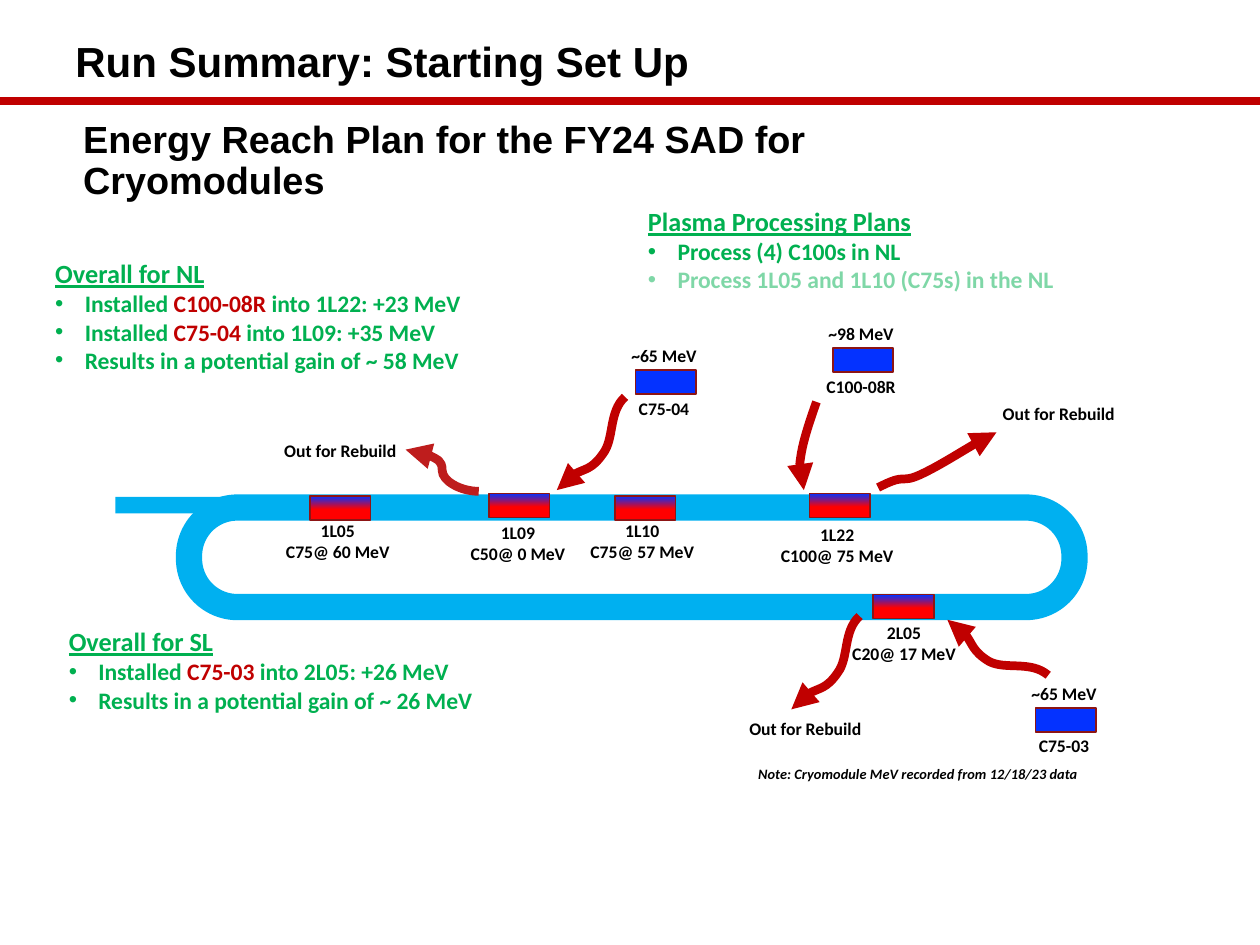
from pptx import Presentation
from pptx.dml.color import RGBColor
from pptx.enum.shapes import MSO_CONNECTOR, MSO_SHAPE
from pptx.enum.text import MSO_ANCHOR, PP_ALIGN
from pptx.oxml.ns import qn
from pptx.util import Pt
from lxml.etree import SubElement

rgb = RGBColor.from_string
GREEN, RED, CYAN, BLUE, BLACK = "00B050", "C00000", "00B0F0", "0432FF", "000000"


def write(para, text, size, hue=BLACK, face="Calibri"):
    run = para.add_run()
    run.text = text
    font = run.font
    font.name, font.size, font.bold = face, Pt(size), True
    font.color.rgb = rgb(hue)
    return run


def label(home, mid, top, wide, lines):
    box = home.add_textbox(Pt(mid - wide / 2), Pt(top), Pt(wide), Pt(16))
    frame = box.text_frame
    frame.word_wrap = False
    frame.margin_left = frame.margin_right = Pt(4.3)
    frame.margin_top = frame.margin_bottom = Pt(2.2)
    for i, line in enumerate(lines):
        para = frame.add_paragraph() if i else frame.paragraphs[0]
        para.alignment = PP_ALIGN.CENTER
        write(para, line, 10.1)


deck = Presentation()
deck.slide_width, deck.slide_height = Pt(720), Pt(540)
slide = deck.slides.add_slide(deck.slide_layouts[5])
shapes = slide.shapes

# Title
title = shapes.title
title.left, title.top, title.width, title.height = Pt(40.3), Pt(79), Pt(562.3), Pt(27)
frame = title.text_frame
frame.word_wrap = True
frame.vertical_anchor = MSO_ANCHOR.MIDDLE
para = frame.paragraphs[0]
para.alignment = PP_ALIGN.LEFT
para.line_spacing = 0.9
write(para, "Energy Reach Plan for the FY24 SAD for Cryomodules", 21.6, face="Arial")

# Header and footnote
for x, y, w, h, text, size, face, wrap in [
    (36, 16.6, 368.6, 36, "Run Summary: Starting Set Up", 24, "Arial", False),
    (426.2, 433.4, 213.1, 17.3, "Note: Cryomodule MeV recorded from 12/18/23 data",
     8.25, "Calibri", True),
]:
    frame = shapes.add_textbox(Pt(x), Pt(y), Pt(w), Pt(h)).text_frame
    frame.word_wrap = wrap
    run = write(frame.paragraphs[0], text, size, face=face)
    run.font.italic = wrap

# Rule under the header
rule = shapes.add_connector(MSO_CONNECTOR.STRAIGHT, 0, Pt(57.6), Pt(720), Pt(57.6))
rule.line.color.rgb = rgb(RED)
rule.line.width = Pt(4.5)
SubElement(rule._element.spPr, qn("a:effectLst"))

# Accelerator loop and injector
loop = shapes.add_shape(MSO_SHAPE.ROUNDED_RECTANGLE, Pt(108), Pt(290), Pt(506), Pt(56.9))
loop.adjustments[0] = 0.486
loop.shadow.inherit = False
loop.fill.background()
loop.line.color.rgb = rgb(CYAN)
loop.line.width = Pt(15)
feed = shapes.add_shape(MSO_SHAPE.RECTANGLE, Pt(66), Pt(284), Pt(67), Pt(9.4))
feed.shadow.inherit = False
feed.fill.solid()
feed.fill.fore_color.rgb = rgb(CYAN)
feed.line.fill.background()

# Curved arrows: a start, then two Bezier pieces of three points
ess = [(39, 0), (29.5, 8.6), (33, 23.8), (26.5, 32.4), (20, 41.8), (3.5, 44.6), (0, 53.3)]
curves = [[(x + dx, y + dy) for x, y in ess] for dx, dy in [(452.2, 352.1), (318.2, 226.8)]]
curves += [
    [(466.6, 229.7), (463, 239.8), (459.4, 250.6), (457.9, 259.2),
     (456.5, 267.8), (457.9, 273.6), (459.4, 280.1)],
    [(501.8, 278.6), (518.4, 270), (514.1, 276.5), (525.6, 271.4),
     (536.4, 266.4), (563.8, 249.1), (569.5, 247)],
    [(599, 385.9), (589, 377.3), (574.6, 383), (565.2, 378),
     (555.8, 372.2), (550.8, 356.4), (541.4, 354.2)],
]
arrows = []
for curve in curves:
    dots = [(Pt(x), Pt(y)) for x, y in curve]
    pen = shapes.build_freeform(*dots[0])
    pen.add_line_segments(dots[1:], close=False)
    arrow = pen.convert_to_shape()
    arrow.fill.background()
    steps = list(arrow._element.iter(qn("a:lnTo")))
    for i in range(0, len(steps), 3):
        bend = steps[i].makeelement(qn("a:cubicBezTo"))
        steps[i].addprevious(bend)
        for step in steps[i:i + 3]:
            bend.append(step[0])
            step.getparent().remove(step)
    arrows.append((arrow, RED))
link = shapes.add_connector(MSO_CONNECTOR.CURVE, Pt(273.6), Pt(280.8), Pt(231.8), Pt(257))
arrows.append((link, "BE1D1D"))
for arrow, hue in arrows:
    arrow.line.color.rgb = rgb(hue)
    arrow.line.width = Pt(5)
    props = arrow._element.spPr
    SubElement(props.find(qn("a:ln")), qn("a:tailEnd"), type="triangle")
    SubElement(props, qn("a:effectLst"))

# Cryomodules: spares have an energy above and a name below
for x, y, spare, mid, top, lines in [
    (177.1, 283.4, None, 193, 295, ["1L05", "C75@ 60 MeV"]),
    (279.4, 282, None, 296, 295.9, ["1L09", "C50@ 0 MeV"]),
    (351.4, 283.4, None, 367, 295, ["1L10", "C75@ 57 MeV"]),
    (462.5, 282, None, 478.4, 297.2, ["1L22", "C100@ 75 MeV"]),
    (499, 339.8, None, 516.6, 353, ["2L05", "C20@ 17 MeV"]),
    (363.2, 211.5, "~65 MeV", 379.4, 225.4, ["C75-04"]),
    (475.9, 198.7, "~98 MeV", 492, 212.4, ["C100-08R"]),
    (591.8, 404.5, "~65 MeV", 608, 418, ["C75-03"]),
]:
    home = shapes.add_group_shape().shapes if spare else shapes
    unit = home.add_shape(MSO_SHAPE.RECTANGLE, Pt(x), Pt(y), Pt(34.6), Pt(13.7))
    unit.shadow.inherit = False
    unit.line.color.rgb = rgb("8D1515")
    unit.line.width = Pt(1)
    if spare:
        unit.fill.solid()
        unit.fill.fore_color.rgb = rgb(BLUE)
        label(home, mid, y - 16.6, 54, [spare])
    else:
        unit.fill.gradient()
        unit.fill.gradient_angle = 90
        for stop, spot, hue in zip(unit.fill.gradient_stops, (0.44, 1), ("FF0000", BLUE)):
            stop.position = spot
            stop.color.rgb = rgb(hue)
    label(home, mid, top, 54 if spare else 80, lines)

# Modules leaving the tunnel
for mid, top in [(194.5, 248.9), (605, 228.2), (460.2, 408.2)]:
    label(shapes, mid, top, 80, ["Out for Rebuild"])

# Bulleted summaries: each bullet is a list of (text, colour, percent opaque)
for x, y, w, h, head, items in [
    (24.5, 143.7, 305.3, 74.9, "Overall for NL", [
        [("Installed ", GREEN, 100), ("C100-08R", RED, 100), (" into 1L22: +23 MeV", GREEN, 100)],
        [("Installed ", GREEN, 100), ("C75-04", RED, 100), (" into 1L09: +35 MeV", GREEN, 100)],
        [("Results in a potential gain of ~ 58 MeV", GREEN, 100)]]),
    (32.2, 354, 349.2, 58.3, "Overall for SL", [
        [("Installed ", GREEN, 100), ("C75-03", RED, 100), (" into 2L05: +26 MeV", GREEN, 100)],
        [("Results in a potential gain of ~ 26 MeV", GREEN, 100)]]),
    (363.2, 113.8, 316.8, 58.3, "Plasma Processing Plans", [
        [("Process (4) C100s in NL", GREEN, 100)],
        [("Process 1L05 and 1L10 (C75s) in the NL", GREEN, 49)]]),
]:
    frame = shapes.add_textbox(Pt(x), Pt(y), Pt(w), Pt(h)).text_frame
    frame.word_wrap = True
    write(frame.paragraphs[0], head, 15, GREEN).font.underline = True
    for item in items:
        para = frame.add_paragraph()
        props = para._p.get_or_add_pPr()
        props.set("marL", str(Pt(16.9)))
        props.set("indent", str(-Pt(16.9)))
        SubElement(props, qn("a:buFont"), typeface="Arial")
        SubElement(props, qn("a:buChar"), char="•")
        for text, hue, solid in item:
            run = write(para, text, 13.5, hue)
            if solid < 100:
                tint = next(run._r.iter(qn("a:srgbClr")))
                SubElement(tint, qn("a:alpha"), val=str(solid * 1000))

deck.save("out.pptx")
